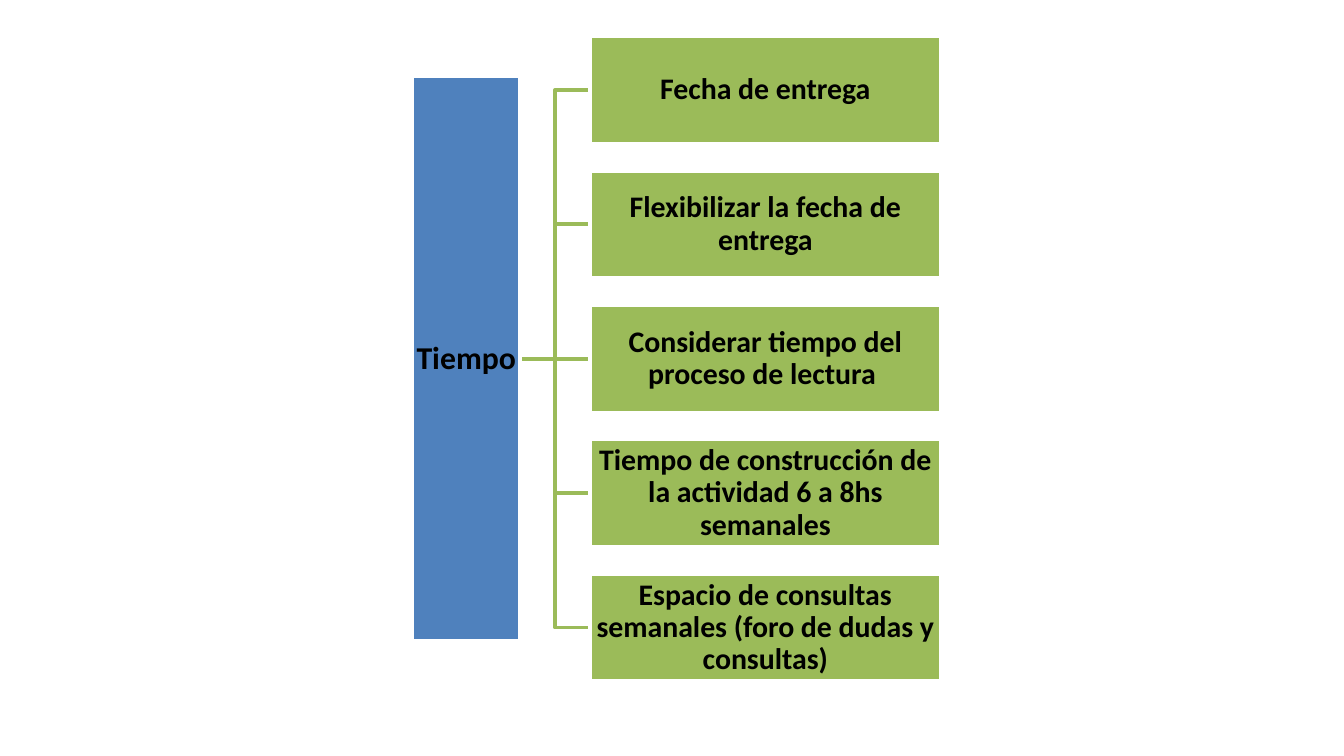
from dataclasses import dataclass

from pptx import Presentation
from pptx.dml.color import RGBColor
from pptx.enum.shapes import MSO_CONNECTOR, MSO_SHAPE
from pptx.enum.text import MSO_ANCHOR, PP_ALIGN
from pptx.oxml.ns import qn
from pptx.util import Inches, Pt
from lxml import etree

RECTANGLE = MSO_SHAPE.RECTANGLE
STRAIGHT, ELBOW = MSO_CONNECTOR.STRAIGHT, MSO_CONNECTOR.ELBOW
MIDDLE, CENTER = MSO_ANCHOR.MIDDLE, PP_ALIGN.CENTER
LEFT_SIDE, RIGHT_SIDE = 1, 3
BLANK_LAYOUT = 6


@dataclass(frozen=True)
class Theme:
    root: RGBColor = RGBColor(0x4F, 0x81, 0xBD)
    branch: RGBColor = RGBColor(0x9B, 0xBB, 0x59)
    outline: RGBColor = RGBColor(0xFF, 0xFF, 0xFF)
    text: RGBColor = RGBColor(0, 0, 0)
    font: str = "Calibri"
    root_size: Pt = Pt(17)
    branch_size: Pt = Pt(16)
    line_width: Pt = Pt(2)


class TreeSlide:
    def __init__(self, slide, theme):
        self.s = slide
        self.theme = theme

    def box(self, text, left, top, width, height, fill, size):
        sp = self.s.shapes.add_shape(
            RECTANGLE, Inches(left), Inches(top), Inches(width), Inches(height))
        sp.shadow.inherit = False
        sp.fill.solid()
        sp.fill.fore_color.rgb = fill
        sp.line.color.rgb = self.theme.outline
        sp.line.width = self.theme.line_width
        tf = sp.text_frame
        tf.word_wrap = True
        tf.vertical_anchor = MIDDLE
        tf.margin_left = tf.margin_right = Inches(0.01)
        tf.margin_top = tf.margin_bottom = Inches(0.01)
        p = tf.paragraphs[0]
        p.text = text
        p.alignment = CENTER
        p.line_spacing = 0.9
        p.font.name = self.theme.font
        p.font.size = size
        p.font.bold = True
        p.font.color.rgb = self.theme.text
        return sp

    def link(self, x1, y1, x2, y2):
        kind = STRAIGHT if y1 == y2 else ELBOW
        line = self.s.shapes.add_connector(
            kind, Inches(x1), Inches(y1), Inches(x2), Inches(y2))
        line.line.color.rgb = self.theme.branch
        line.line.width = self.theme.line_width
        etree.SubElement(line._element.spPr, qn("a:effectLst"))
        return line


BRANCHES = [
    "Fecha de entrega",
    "Flexibilizar la fecha de entrega",
    "Considerar tiempo del proceso de lectura ",
    "Tiempo de construcción de la actividad 6 a 8hs semanales",
    "Espacio de consultas semanales (foro de dudas y consultas)",
]
ROOT_LEFT, ROOT_WIDTH, ROOT_HEIGHT = 3.07, 0.8, 4.2
BRANCH_LEFT, BRANCH_WIDTH, BRANCH_HEIGHT = 4.39, 2.61, 0.8
CENTER_Y, PITCH = 2.67, 1.0


def main():
    prs = Presentation()
    prs.slide_width = Inches(10)
    prs.slide_height = prs.slide_width * 9 // 16
    theme = Theme()
    tree = TreeSlide(prs.slides.add_slide(prs.slide_layouts[BLANK_LAYOUT]), theme)

    middle = (len(BRANCHES) - 1) / 2
    centers = [CENTER_Y + (i - middle) * PITCH for i in range(len(BRANCHES))]

    # Links come first so that the white box outlines cover their ends.
    links = [tree.link(ROOT_LEFT + ROOT_WIDTH, CENTER_Y, BRANCH_LEFT, y)
             for y in centers]
    root = tree.box("Tiempo", ROOT_LEFT, CENTER_Y - ROOT_HEIGHT / 2,
                    ROOT_WIDTH, ROOT_HEIGHT, theme.root, theme.root_size)
    for text, y, link in zip(BRANCHES, centers, links):
        branch = tree.box(text, BRANCH_LEFT, y - BRANCH_HEIGHT / 2,
                          BRANCH_WIDTH, BRANCH_HEIGHT, theme.branch, theme.branch_size)
        link.begin_connect(root, RIGHT_SIDE)
        link.end_connect(branch, LEFT_SIDE)

    prs.save("out.pptx")


if __name__ == "__main__":
    main()
